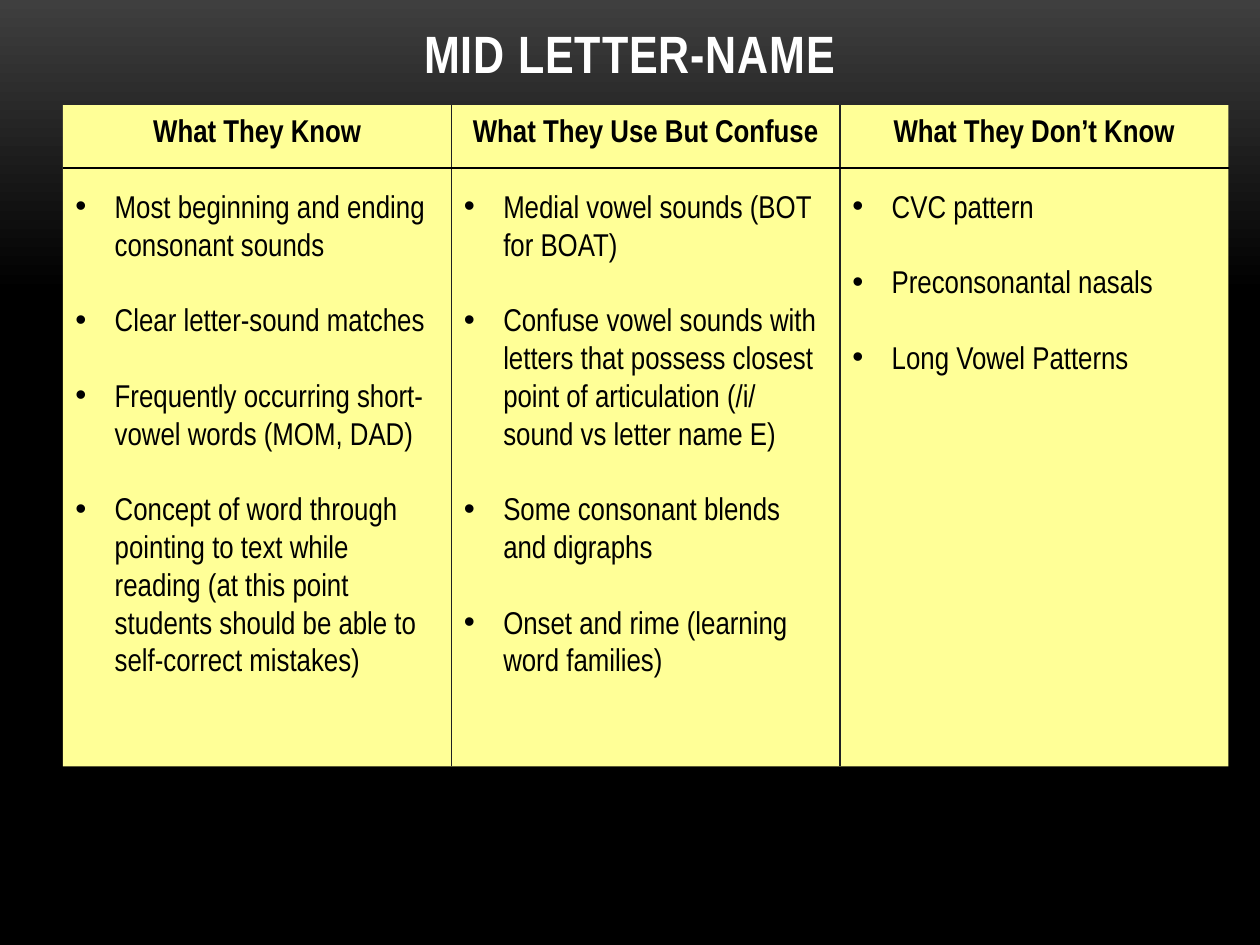
from copy import deepcopy
from dataclasses import dataclass
from typing import Any

from lxml.etree import SubElement
from pptx import Presentation
from pptx.dml.color import RGBColor
from pptx.enum.shapes import MSO_CONNECTOR as Connector, MSO_SHAPE as Shape
from pptx.enum.text import MSO_ANCHOR as Anchor, PP_ALIGN as Align
from pptx.oxml.ns import qn
from pptx.util import Pt


@dataclass(frozen=True)
class Theme:
    font: str = "Arial Narrow"
    title_size: int = 30
    body_size: int = 18
    white: RGBColor = RGBColor(0xFF, 0xFF, 0xFF)
    black: RGBColor = RGBColor(0, 0, 0)
    charcoal: RGBColor = RGBColor(0x3F, 0x3F, 0x3F)
    panel: RGBColor = RGBColor(0xFF, 0xFF, 0x97)
    divider: RGBColor = RGBColor(0x1F, 0x21, 0x23)


@dataclass(frozen=True)
class Column:
    heading: str
    points: tuple[str, ...]


THEME = Theme()
LEFT, TOP, COLUMN_WIDTH, HEIGHT = 36, 60, 222, 378
HEADING_HEIGHT = 36
BULLET_INDENT = 22.5
POINT_GAP = 21.6

COLUMNS = (
    Column("What They Know", (
        "Most beginning and ending consonant sounds",
        "Clear letter-sound matches",
        "Frequently occurring short-vowel words (MOM, DAD)",
        "Concept of word through pointing to text while reading "
        "(at this point students should be able to self-correct mistakes)",
    )),
    Column("What They Use But Confuse", (
        "Medial vowel sounds (BOT for BOAT)",
        "Confuse vowel sounds with letters that possess closest "
        "point of articulation (/i/ sound vs letter name E)",
        "Some consonant blends and digraphs",
        "Onset and rime (learning word families)",
    )),
    Column("What They Don’t Know", (
        "CVC pattern",
        "Preconsonantal nasals",
        "Long Vowel Patterns",
    )),
)


def set_all(target: Any, formats: dict[str, Any]) -> None:
    for name, value in formats.items():
        setattr(target, name, value)


def write(paragraph: Any, text: str, size: int, color: RGBColor, bold: bool) -> Any:
    """Add one styled run to the paragraph and return it."""
    run = paragraph.add_run()
    run.text = text
    set_all(run.font, {"name": THEME.font, "size": Pt(size), "bold": bold})
    run.font.color.rgb = color
    return run


def paint_background(slide: Any) -> None:
    """Fade from charcoal to black in the top third, then stay black."""
    fill = slide.background.fill
    fill.gradient()
    fill.gradient_angle = 270
    start, end = fill.gradient_stops
    start.color.rgb, end.color.rgb = THEME.charcoal, THEME.black
    start.position, end.position = 0, 1
    last_stop = list(slide.element.iter(qn("a:gs")))[-1]
    middle_stop = deepcopy(last_stop)
    middle_stop.set("pos", "31000")
    last_stop.addprevious(middle_stop)


def add_title(slide: Any, text: str) -> None:
    title = slide.shapes.add_textbox(Pt(48), Pt(-6), Pt(624), Pt(57.6))
    set_all(title.text_frame, {"word_wrap": True, "vertical_anchor": Anchor.BOTTOM})
    paragraph = title.text_frame.paragraphs[0]
    paragraph.alignment = Align.CENTER
    run = write(paragraph, text, THEME.title_size, THEME.white, True)
    run.font._element.set("spc", "50")


def add_point(frame: Any, text: str) -> None:
    paragraph = frame.add_paragraph()
    properties = paragraph._p.get_or_add_pPr()
    properties.set("marL", str(Pt(BULLET_INDENT)))
    properties.set("indent", str(-Pt(BULLET_INDENT)))
    SubElement(properties, qn("a:buFont")).set("typeface", "Arial")
    SubElement(properties, qn("a:buChar")).set("char", "•")
    set_all(paragraph, {"alignment": Align.LEFT, "space_before": Pt(POINT_GAP)})
    write(paragraph, text, THEME.body_size, THEME.black, False)


def add_column(slide: Any, column: Column, left: float) -> None:
    panel = slide.shapes.add_shape(
        Shape.RECTANGLE, Pt(left), Pt(TOP), Pt(COLUMN_WIDTH), Pt(HEIGHT))
    panel.shadow.inherit = False
    panel.fill.solid()
    panel.fill.fore_color.rgb = THEME.panel
    panel.line.fill.background()
    frame = panel.text_frame
    set_all(frame, {"word_wrap": True, "vertical_anchor": Anchor.TOP})
    heading = frame.paragraphs[0]
    heading.alignment = Align.CENTER
    write(heading, column.heading, THEME.body_size, THEME.black, True)
    for point in column.points:
        add_point(frame, point)


def add_rule(slide: Any, x1: float, y1: float, x2: float, y2: float,
             color: RGBColor) -> None:
    rule = slide.shapes.add_connector(
        Connector.STRAIGHT, Pt(x1), Pt(y1), Pt(x2), Pt(y2))
    rule.line.color.rgb = color
    rule.line.width = Pt(0.75)
    SubElement(rule._element.spPr, qn("a:effectLst"))


def main() -> None:
    deck = Presentation()
    set_all(deck, {"slide_width": Pt(720), "slide_height": Pt(540)})
    slide = deck.slides.add_slide(deck.slide_layouts[6])
    paint_background(slide)
    add_title(slide, "MID LETTER-NAME")

    edges = [LEFT + i * COLUMN_WIDTH for i in range(len(COLUMNS) + 1)]
    for column, left in zip(COLUMNS, edges):
        add_column(slide, column, left)
    for x in edges[1:-1]:
        add_rule(slide, x, TOP, x, TOP + HEIGHT, THEME.divider)
    heading_bottom = TOP + HEADING_HEIGHT
    add_rule(slide, edges[0], heading_bottom, edges[-1], heading_bottom, THEME.black)

    deck.save("out.pptx")


if __name__ == "__main__":
    main()
